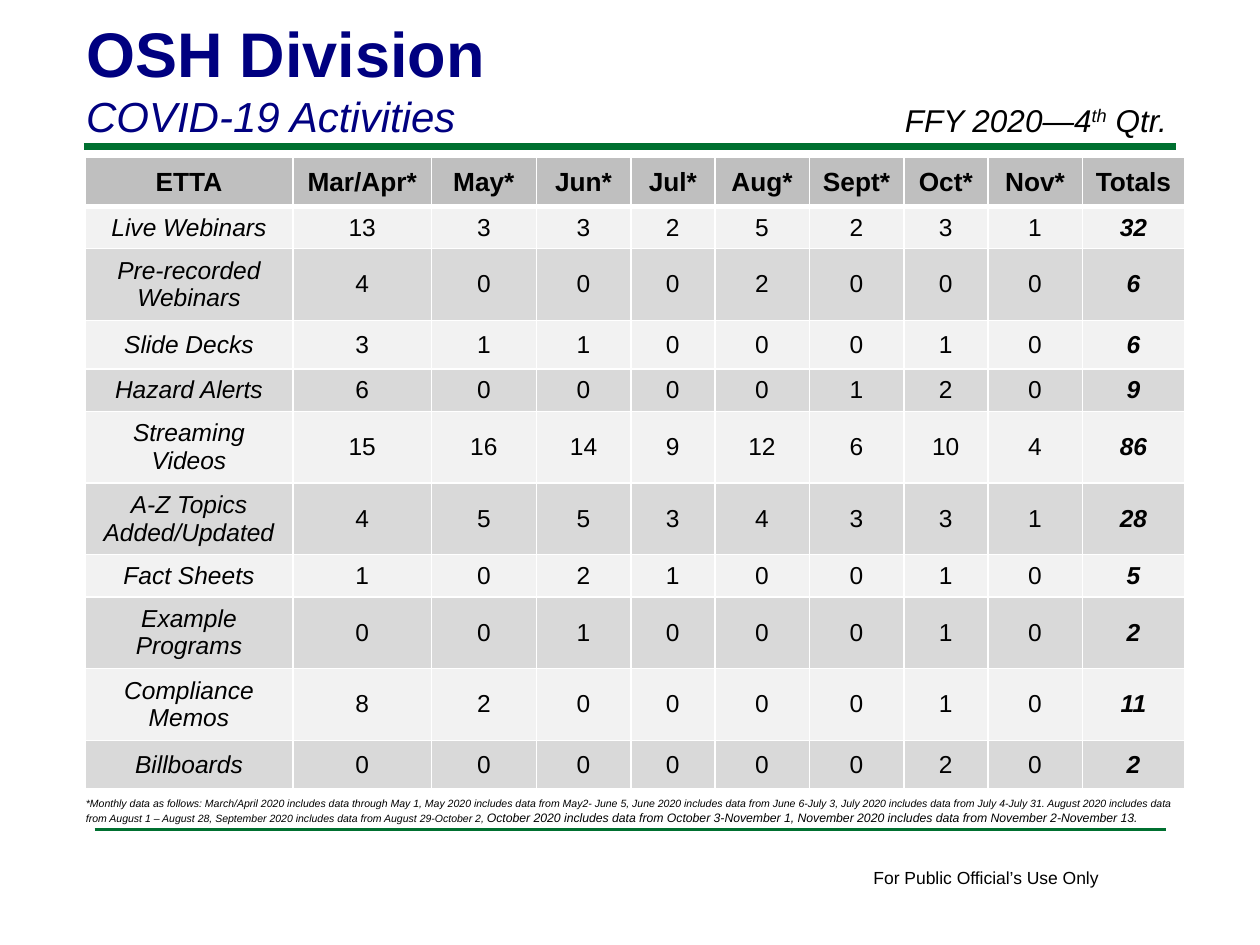
from lxml import etree
from pptx import Presentation
from pptx.dml.color import RGBColor
from pptx.enum.shapes import MSO_CONNECTOR
from pptx.enum.text import MSO_ANCHOR, MSO_AUTO_SIZE, PP_ALIGN
from pptx.oxml.ns import qn
from pptx.util import Pt

STRAIGHT = MSO_CONNECTOR.STRAIGHT
TOP, MIDDLE, BOTTOM = MSO_ANCHOR.TOP, MSO_ANCHOR.MIDDLE, MSO_ANCHOR.BOTTOM
NO_FIT = MSO_AUTO_SIZE.NONE
LEFT, CENTER = PP_ALIGN.LEFT, PP_ALIGN.CENTER
TITLE_ONLY = 5

FONT = "Arial"
BLACK, NAVY, GREEN, WHITE = "000000", "000080", "007030", "FFFFFF"
HEADER_FILL, ROW_FILLS = "BFBFBF", ("F2F2F2", "D9D9D9")

COLUMN_WIDTHS = (119, 79, 60, 54, 48, 54, 54, 48, 54, 58.5)
HEADER_HEIGHT = 28
HEADINGS = ("ETTA", "Mar/Apr*", "May*", "Jun*", "Jul*", "Aug*", "Sept*", "Oct*", "Nov*", "Totals")
ACTIVITIES = (
    (24, "Live Webinars", 13, 3, 3, 2, 5, 2, 3, 1, 32),
    (41, "Pre-recorded Webinars", 4, 0, 0, 0, 2, 0, 0, 0, 6),
    (28, "Slide Decks", 3, 1, 1, 0, 0, 0, 1, 0, 6),
    (24, "Hazard Alerts", 6, 0, 0, 0, 0, 1, 2, 0, 9),
    (41, "Streaming Videos", 15, 16, 14, 9, 12, 6, 10, 4, 86),
    (41, "A-Z Topics Added/Updated", 4, 5, 5, 3, 4, 3, 3, 1, 28),
    (24, "Fact Sheets", 1, 0, 2, 1, 0, 0, 1, 0, 5),
    (41, "Example Programs", 0, 0, 1, 0, 0, 0, 1, 0, 2),
    (41, "Compliance Memos", 8, 2, 0, 0, 0, 0, 1, 0, 11),
    (28, "Billboards", 0, 0, 0, 0, 0, 0, 2, 0, 2),
)
NOTE_START = (
    "*Monthly data as follows: March/April 2020 includes data through May 1, "
    "May 2020 includes data from May2- June 5, June 2020 includes data from June 6-July 3, "
    "July 2020 includes data from July 4-July 31. August 2020 includes data from "
    "August 1 – August 28, September 2020 includes data from August 29-October 2, "
)
NOTE_END = (
    "October 2020 includes data from October 3-November 1, "
    "November 2020 includes data from November 2-November 13."
)


def color(value):
    """Turn a hex string into a colour."""
    return RGBColor.from_string(value)


def add_span(para, text, size, fill=BLACK, **extra):
    """Append formatted text to a paragraph."""
    span = para.add_run()
    span.text = text
    formats = {"name": FONT, "size": Pt(size), "bold": False, "italic": False, **extra}
    for name, value in formats.items():
        setattr(span.font, name, value)
    span.font.color.rgb = color(fill)
    return span


def add_rule(page, left, top, width, weight):
    """Draw a horizontal green rule."""
    rule = page.shapes.add_connector(STRAIGHT, Pt(left), Pt(top), Pt(left + width), Pt(top))
    rule.line.color.rgb = color(GREEN)
    rule.line.width = Pt(weight)
    etree.SubElement(rule._element.spPr, qn("a:effectLst"))


def add_title(page, left, top, width, height):
    """Fill the title placeholder with the division and its subject."""
    title = page.shapes.title
    for name, value in {"left": left, "top": top, "width": width, "height": height}.items():
        setattr(title, name, Pt(value))
    frame = title.text_frame
    for name, value in {"auto_size": NO_FIT, "word_wrap": True, "vertical_anchor": BOTTOM}.items():
        setattr(frame, name, value)
    division, subject = frame.paragraphs[0], frame.add_paragraph()
    add_span(division, "OSH Division", 36, NAVY, bold=True)
    add_span(subject, "COVID-19 Activities", 24, NAVY, italic=True)
    for para in (division, subject):
        for name, value in {"alignment": LEFT, "line_spacing": 1.0, "space_before": Pt(0)}.items():
            setattr(para, name, value)


def add_text(page, left, top, width, height, wrap=True):
    """Add a text box and return its first paragraph."""
    box = page.shapes.add_textbox(Pt(left), Pt(top), Pt(width), Pt(height))
    box.text_frame.word_wrap = wrap
    box.text_frame.vertical_anchor = TOP
    return box.text_frame.paragraphs[0]


def add_quarter(page, left, top, width, height):
    """Write the reporting quarter with its raised ordinal."""
    para = add_text(page, left, top, width, height)
    add_span(para, "FFY 2020—4", 18, italic=True)
    ordinal = add_span(para, "th", 18, italic=True)
    ordinal.font._element.set("baseline", "30000")
    add_span(para, " Qtr.", 18, italic=True)


def add_note(page, left, top, width, height):
    """Write the note on the reporting months."""
    para = add_text(page, left, top, width, height)
    add_span(para, NOTE_START, 6, italic=True)
    add_span(para, NOTE_END, 7, italic=True)


def set_borders(cell, bottom):
    """Give a cell white borders, with its own bottom weight."""
    properties = cell._tc.get_or_add_tcPr()
    for side, weight in {"L": 1, "R": 1, "T": 1, "B": bottom}.items():
        border = etree.SubElement(properties, qn(f"a:ln{side}"), w=str(Pt(weight)))
        fill = etree.SubElement(border, qn("a:solidFill"))
        etree.SubElement(fill, qn("a:srgbClr"), val=WHITE)


def fill_cell(cell, text, fill, bottom, size, bold, italic):
    """Write and format one table cell."""
    set_borders(cell, bottom)
    cell.fill.solid()
    cell.fill.fore_color.rgb = color(fill)
    cell.vertical_anchor = MIDDLE
    para = cell.text_frame.paragraphs[0]
    para.alignment = CENTER
    add_span(para, str(text), size, bold=bold, italic=italic)


def add_activity_table(page, left, top):
    """Build the table of monthly activity counts."""
    heights = [HEADER_HEIGHT] + [activity[0] for activity in ACTIVITIES]
    table = page.shapes.add_table(
        len(heights), len(HEADINGS), Pt(left), Pt(top), Pt(sum(COLUMN_WIDTHS)), Pt(sum(heights))
    ).table
    table.horz_banding = False
    for column, width in zip(table.columns, COLUMN_WIDTHS):
        column.width = Pt(width)
    for row, height in zip(table.rows, heights):
        row.height = Pt(height)
    last = len(HEADINGS) - 1
    for index, heading in enumerate(HEADINGS):
        fill_cell(table.cell(0, index), heading, HEADER_FILL, 3, 15, True, False)
    for number, activity in enumerate(ACTIVITIES):
        for index, value in enumerate(activity[1:]):
            fill_cell(table.cell(number + 1, index), value, ROW_FILLS[number % 2], 1, 14,
                      index == last, index in (0, last))


def main():
    """Build and save the deck."""
    deck = Presentation()
    deck.slide_width, deck.slide_height = Pt(720), Pt(540)
    page = deck.slides.add_slide(deck.slide_layouts[TITLE_ONLY])
    add_rule(page, 48, 84, 624, 4)
    add_rule(page, 54, 474, 612, 2)
    footer = add_text(page, 492, 492, 145, 19.4, wrap=False)
    add_span(footer, "For Public Official’s Use Only", 10)
    add_title(page, 42, 4, 594, 80)
    add_activity_table(page, 48.5, 90)
    add_note(page, 42, 452, 635, 23)
    add_quarter(page, 510, 54, 180, 29)
    deck.save("out.pptx")


if __name__ == "__main__":
    main()
